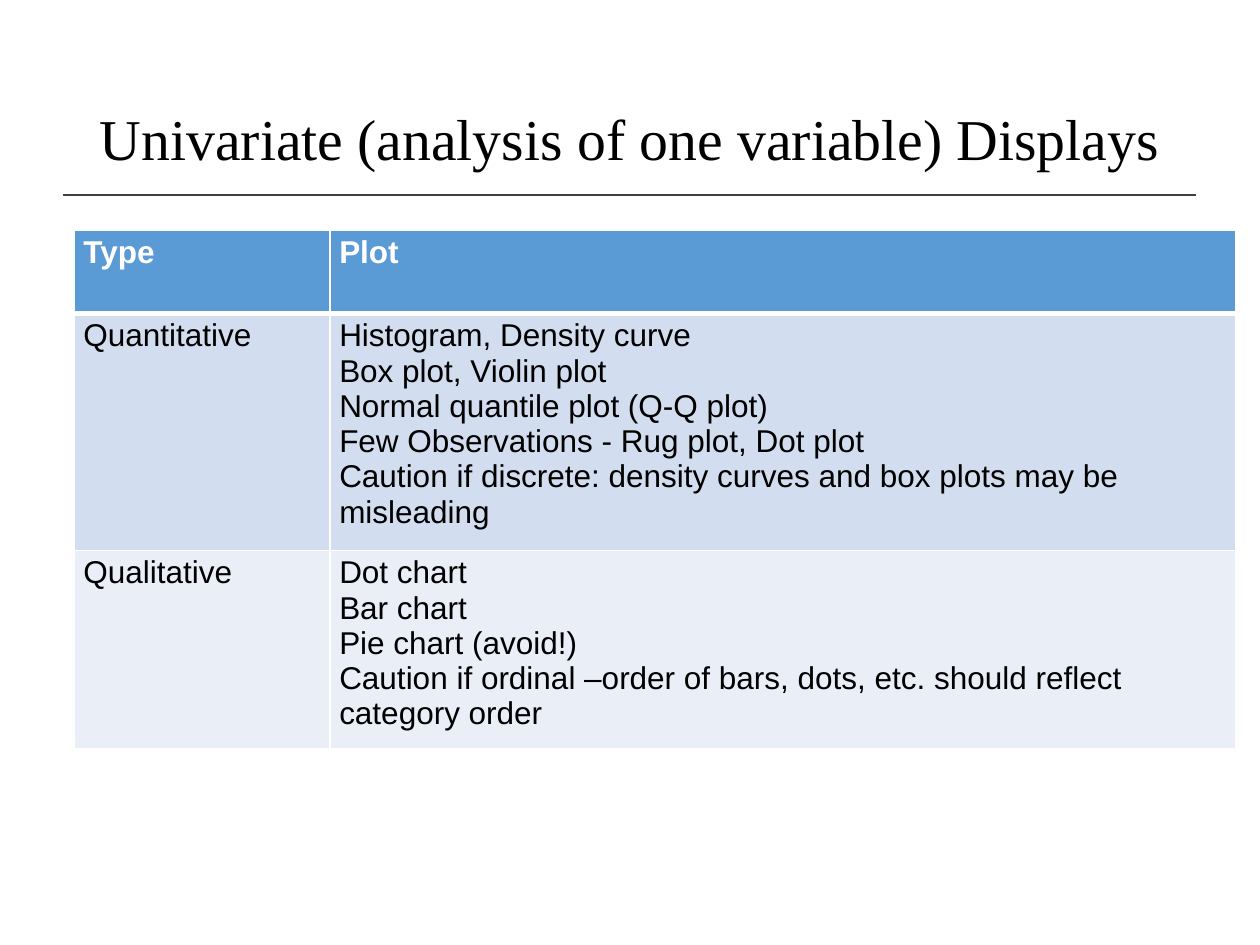
import pptx
import pptx.dml.color
import pptx.enum.shapes
import pptx.enum.text
import pptx.oxml
import pptx.oxml.ns
import pptx.util
from lxml import etree

Pt = pptx.util.Pt

COLORS = {
    "ink": "000000",
    "rule": "404040",
    "white": "FFFFFF",
    "header": "5B9BD5",
    "band_dark": "D2DEEF",
    "band_light": "EAEFF7",
}

DISPLAYS = [
    (["Type"], ["Plot"]),
    (["Quantitative"], [
        "Histogram, Density curve",
        "Box plot, Violin plot",
        "Normal quantile plot (Q-Q plot)",
        "Few Observations - Rug plot, Dot plot",
        "Caution if discrete: density curves and box plots may be misleading",
    ]),
    (["Qualitative"], [
        "Dot chart",
        "Bar chart",
        "Pie chart (avoid!)",
        "Caution if ordinal –order of bars, dots, etc. should reflect category order",
    ]),
]


def rgb(name):
    return pptx.dml.color.RGBColor.from_string(COLORS[name])


def add_run(paragraph, text, size, font, color, bold=False):
    run = paragraph.add_run()
    run.text = text
    run.font.size = Pt(size)
    run.font.name = font
    run.font.bold = bold
    run.font.color.rgb = rgb(color)


def set_border(cell, side, width):
    properties = cell._tc.get_or_add_tcPr()
    border = etree.SubElement(properties, pptx.oxml.ns.qn(f"a:{side}"), w=str(Pt(width)))
    fill = etree.SubElement(border, pptx.oxml.ns.qn("a:solidFill"))
    etree.SubElement(fill, pptx.oxml.ns.qn("a:srgbClr"), val=COLORS["white"])


def add_title(slide, left, top, width, height):
    title = slide.shapes.add_textbox(Pt(left), Pt(top), Pt(width), Pt(height))
    frame = title.text_frame
    frame.word_wrap = True
    frame.margin_left = frame.margin_right = 0
    frame.vertical_anchor = pptx.enum.text.MSO_ANCHOR.MIDDLE
    paragraph = frame.paragraphs[0]
    paragraph.alignment = pptx.enum.text.PP_ALIGN.CENTER
    paragraph.line_spacing = 0.9
    add_run(paragraph, "Univariate (analysis of one variable) Displays",
            33, "Times New Roman", "ink")


def add_title_rule(slide, left, top, width):
    rule = slide.shapes.add_connector(
        pptx.enum.shapes.MSO_CONNECTOR.STRAIGHT,
        Pt(left), Pt(top), Pt(left + width), Pt(top))
    rule.line.color.rgb = rgb("rule")
    rule.line.width = Pt(1)
    etree.SubElement(rule._element.spPr, pptx.oxml.ns.qn("a:effectLst"))


def fill_cell(cell, lines, fill, is_header):
    cell.margin_left = cell.margin_right = Pt(5.2)
    cell.margin_top = cell.margin_bottom = Pt(2.6)
    for side in ("lnL", "lnR", "lnT"):
        set_border(cell, side, 1)
    set_border(cell, "lnB", 3 if is_header else 1)
    cell.fill.solid()
    cell.fill.fore_color.rgb = rgb(fill)
    frame = cell.text_frame
    for index, line in enumerate(lines):
        paragraph = frame.add_paragraph() if index else frame.paragraphs[0]
        add_run(paragraph, line, 18, "Arial", "white" if is_header else "ink", is_header)


def add_displays_table(slide, left, top, width, height):
    type_width = 146.2
    header_height, quantitative_height = 47.5, 135.4
    row_heights = (header_height, quantitative_height,
                   height - header_height - quantitative_height)
    fills = ("header", "band_dark", "band_light")
    table = slide.shapes.add_table(
        len(DISPLAYS), 2, Pt(left), Pt(top), Pt(width), Pt(height)).table
    table.columns[0].width = Pt(type_width)
    table.columns[1].width = Pt(width - type_width)
    for row, (entry, row_height, fill) in enumerate(zip(DISPLAYS, row_heights, fills)):
        table.rows[row].height = Pt(row_height)
        for column, lines in enumerate(entry):
            fill_cell(table.cell(row, column), lines, fill, row == 0)


def main():
    presentation = pptx.Presentation()
    presentation.slide_width = Pt(720)
    presentation.slide_height = Pt(540)
    slide = presentation.slides.add_slide(presentation.slide_layouts[6])
    add_title_rule(slide, 36, 111.6, 647.3)
    add_title(slide, 49.5, 28.8, 621, 104.4)
    add_displays_table(slide, 42.5, 131.8, 663.5, 289)
    presentation.save("out.pptx")


if __name__ == "__main__":
    main()
